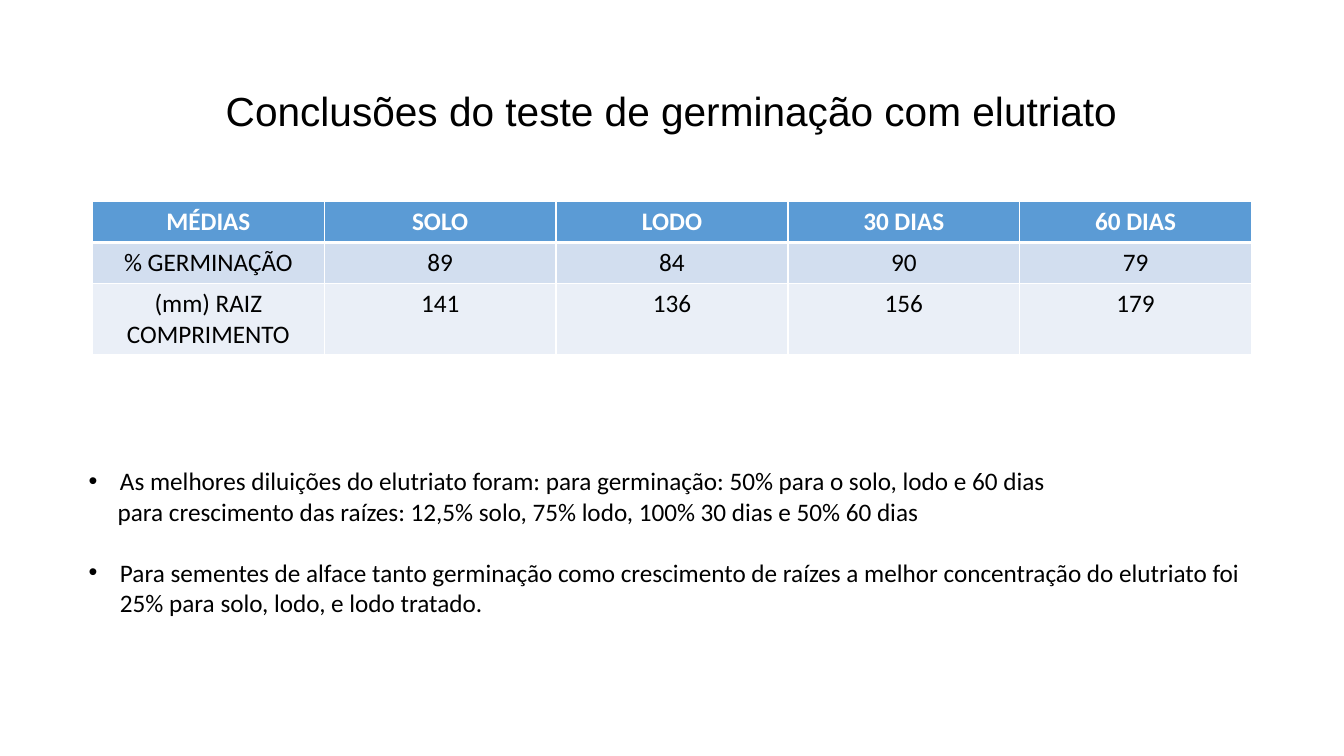
from lxml import etree
from pptx import Presentation
from pptx import util as u
from pptx.dml.color import RGBColor
from pptx.enum import text
from pptx.oxml import ns

TITLE = "Conclusões do teste de germinação com elutriato"
MEANS = [
    ["MÉDIAS", "SOLO", "LODO", "30 DIAS", "60 DIAS"],
    ["% GERMINAÇÃO", "89", "84", "90", "79"],
    ["(mm) RAIZ COMPRIMENTO", "141", "136", "156", "179"],
]
# text, has bullet, space before in points
CONCLUSIONS = [
    ("As melhores diluições do elutriato foram: para germinação: 50% para o solo, "
     "lodo e 60 dias", True, 0),
    ("para crescimento das raízes: 12,5% solo, 75% lodo, 100% 30 dias e 50% 60 dias",
     False, 0),
    ("Para sementes de alface tanto germinação como crescimento de raízes a melhor "
     "concentração do elutriato foi 25% para solo, lodo, e lodo tratado.", True, 22),
]
BLACK, WHITE = "000000", "FFFFFF"
ROW_FILLS = ["5B9BD5", "D2DEEF", "EAEFF7"]
ROW_HEIGHTS = [1.03, 1.03, 1.78]
LEFT, WIDTH = 2.33, 29.21
BULLET_INDENT, PLAIN_INDENT = 0.79, 0.73


def color(value):
    return RGBColor.from_string(value)


def format_runs(paragraph, size, font, fill, bold=False):
    for run in paragraph.runs:
        run.font.size = u.Pt(size)
        run.font.name = font
        run.font.bold = bold
        run.font.color.rgb = color(fill)


def place(shape, left, top, width, height):
    shape.left, shape.top = u.Cm(left), u.Cm(top)
    shape.width, shape.height = u.Cm(width), u.Cm(height)


def add_border(cell, side, points):
    properties = cell._tc.get_or_add_tcPr()
    line = etree.SubElement(properties, ns.qn(f"a:ln{side}"), w=str(u.Pt(points)))
    fill = etree.SubElement(line, ns.qn("a:solidFill"))
    etree.SubElement(fill, ns.qn("a:srgbClr"), val=WHITE)


def set_bullet(paragraph, bulleted):
    properties = paragraph._p.get_or_add_pPr()
    indent = BULLET_INDENT if bulleted else PLAIN_INDENT
    properties.set("marL", str(u.Cm(indent)))
    properties.set("indent", str(u.Cm(-indent) if bulleted else 0))
    if bulleted:
        etree.SubElement(properties, ns.qn("a:buFont"), typeface="Arial")
        etree.SubElement(properties, ns.qn("a:buChar"), char="•")
    else:
        etree.SubElement(properties, ns.qn("a:buNone"))


def add_title(slide):
    title = slide.shapes.title
    place(title, LEFT, 1.01, WIDTH, 3.68)
    title.text_frame.text = TITLE
    title.text_frame.vertical_anchor = text.MSO_ANCHOR.MIDDLE
    title.text_frame.auto_size = text.MSO_AUTO_SIZE.NONE
    paragraph = title.text_frame.paragraphs[0]
    paragraph.alignment = text.PP_ALIGN.CENTER
    paragraph.line_spacing = 0.9
    format_runs(paragraph, 29, "Arial", BLACK)


def add_means_table(slide):
    table = slide.shapes.add_table(
        len(MEANS), len(MEANS[0]), u.Cm(LEFT), u.Cm(5.08),
        u.Cm(WIDTH), u.Cm(sum(ROW_HEIGHTS))).table
    for row_index, values in enumerate(MEANS):
        table.rows[row_index].height = u.Cm(ROW_HEIGHTS[row_index])
        header = row_index == 0
        widths = {"L": 1, "R": 1, "T": 3 if row_index == 1 else 1,
                  "B": 3 if header else 1}
        for column_index, value in enumerate(values):
            cell = table.cell(row_index, column_index)
            for side, points in widths.items():
                add_border(cell, side, points)
            cell.fill.solid()
            cell.fill.fore_color.rgb = color(ROW_FILLS[row_index])
            cell.text_frame.text = value
            paragraph = cell.text_frame.paragraphs[0]
            paragraph.alignment = text.PP_ALIGN.CENTER
            format_runs(paragraph, 18, "Calibri", WHITE if header else BLACK, header)


def add_conclusions(slide):
    body = slide.placeholders[1]
    place(body, 1.98, 11.61, 29.54, 4.88)
    frame = body.text_frame
    frame.auto_size = text.MSO_AUTO_SIZE.NONE
    frame.vertical_anchor = text.MSO_ANCHOR.TOP
    frame.text = "\n".join(line for line, _, _ in CONCLUSIONS)
    for paragraph, (_, bulleted, space) in zip(frame.paragraphs, CONCLUSIONS):
        paragraph.alignment = text.PP_ALIGN.LEFT
        paragraph.line_spacing = 1.0
        paragraph.space_before = u.Pt(space)
        paragraph.space_after = u.Pt(0)
        set_bullet(paragraph, bulleted)
        format_runs(paragraph, 18, "Calibri", BLACK)


def main():
    presentation = Presentation()
    presentation.slide_width, presentation.slide_height = u.Cm(33.87), u.Cm(19.05)
    slide = presentation.slides.add_slide(presentation.slide_layouts[1])
    add_title(slide)
    add_means_table(slide)
    add_conclusions(slide)
    presentation.save("out.pptx")


if __name__ == "__main__":
    main()
